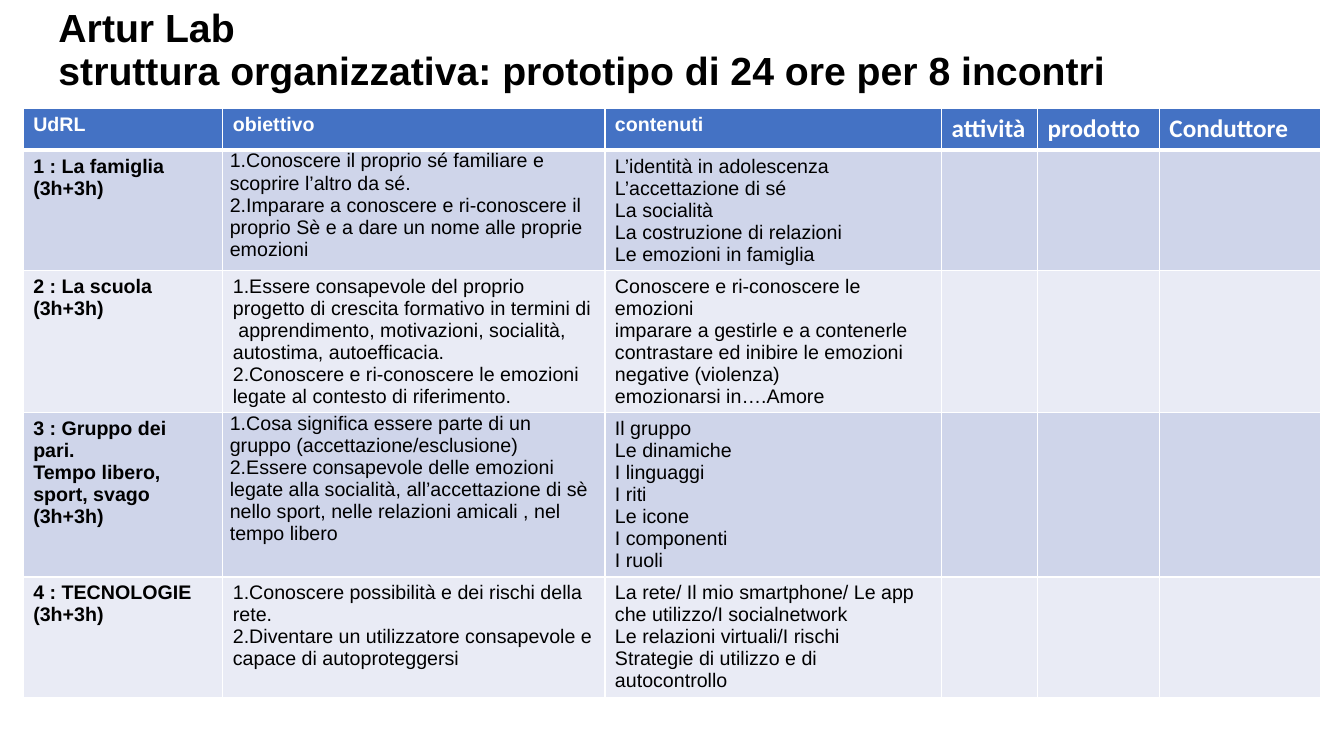
from lxml import etree
from pptx import Presentation
from pptx import util as u
from pptx.dml.color import RGBColor
from pptx.enum import text
from pptx.oxml import ns

BLACK = RGBColor(0x00, 0x00, 0x00)
WHITE = RGBColor(0xFF, 0xFF, 0xFF)
HEADER_BLUE = RGBColor(0x44, 0x72, 0xC4)
BANDS = [RGBColor(0xCF, 0xD5, 0xEA), RGBColor(0xE9, 0xEB, 0xF5)]

COLUMN_WIDTHS = [1.98, 3.79, 3.34, 0.95, 1.21, 1.6]
ROW_HEIGHTS = [0.41, 1.18, 1.41, 1.63, 1.19]

# Header cells: label, font, size
HEADERS = [
    ("UdRL", "Arial", 14),
    ("obiettivo", "Arial", 14),
    ("contenuti", "Arial", 14),
    ("attività", "Calibri", 18),
    ("prodotto", "Calibri", 18),
    ("Conduttore", "Calibri", 18),
]

# One entry per unit: name, goals, contents
UNITS = [
    (
        "1 : La famiglia\n(3h+3h)",
        "1.Conoscere il proprio sé familiare e scoprire l’altro da sé.\n"
        "2.Imparare a conoscere e ri-conoscere il proprio Sè e a dare un nome "
        "alle proprie emozioni",
        "L’identità in adolescenza\nL’accettazione di sé\nLa socialità\n"
        "La costruzione di relazioni\nLe emozioni in famiglia",
    ),
    (
        "2 : La scuola\n(3h+3h)",
        "1.Essere consapevole del proprio progetto di crescita formativo in "
        "termini di  apprendimento, motivazioni, socialità, autostima, "
        "autoefficacia.\n"
        "2.Conoscere e ri-conoscere le emozioni legate al contesto di "
        "riferimento.",
        "Conoscere e ri-conoscere le emozioni\n"
        "imparare a gestirle e a contenerle\n"
        "contrastare ed inibire le emozioni negative (violenza)\n"
        "emozionarsi in….Amore",
    ),
    (
        "3 : Gruppo dei pari.\nTempo libero, sport, svago\n(3h+3h)",
        "1.Cosa significa essere parte di un gruppo "
        "(accettazione/esclusione)\n"
        "2.Essere consapevole delle emozioni legate alla socialità, "
        "all’accettazione di sè nello sport, nelle relazioni amicali , nel "
        "tempo libero",
        "Il gruppo\nLe dinamiche\nI linguaggi\nI riti\nLe icone\n"
        "I componenti\nI ruoli",
    ),
    (
        "4 : TECNOLOGIE\n(3h+3h)",
        "1.Conoscere possibilità e dei rischi della rete.\n"
        "2.Diventare un utilizzatore consapevole e capace di autoproteggersi",
        "La rete/ Il mio smartphone/ Le app che utilizzo/I socialnetwork\n"
        "Le relazioni virtuali/I rischi\n"
        "Strategie di utilizzo e di autocontrollo",
    ),
]
TIGHT_GOALS = (1, 3)  # rows whose goals cell has narrower margins


def format_text(tf, font, size, color, bold):
    for p in tf.paragraphs:
        for r in p.runs:
            r.font.name = font
            r.font.size = u.Pt(size)
            r.font.color.rgb = color
            r.font.bold = bold


def add_title(slide):
    sp = slide.shapes.title
    sp.left, sp.top = u.Inches(0.48), u.Inches(0.03)
    sp.width, sp.height = u.Inches(12.42), u.Inches(0.96)
    tf = sp.text_frame
    tf.text = "Artur Lab\vstruttura organizzativa: prototipo di 24 ore per 8 incontri"
    tf.auto_size = text.MSO_AUTO_SIZE.NONE
    tf.vertical_anchor = text.MSO_ANCHOR.MIDDLE
    p = tf.paragraphs[0]
    p.alignment = text.PP_ALIGN.LEFT
    p.line_spacing = 0.9
    format_text(tf, "Arial", 28, BLACK, True)


def set_borders(cell, bottom):
    """Draw white lines on all sides; they must precede the cell's fill."""
    tc_pr = cell._tc.get_or_add_tcPr()
    widths = {"lnL": 1, "lnR": 1, "lnT": 1, "lnB": bottom}
    for i, (side, width) in enumerate(widths.items()):
        ln = etree.Element(ns.qn("a:" + side), w=str(u.Pt(width)))
        fill = etree.SubElement(ln, ns.qn("a:solidFill"))
        etree.SubElement(fill, ns.qn("a:srgbClr"), val=str(WHITE))
        tc_pr.insert(i, ln)


def fill_cell(cell, fill, words, font, size, color, bold):
    cell.fill.solid()
    cell.fill.fore_color.rgb = fill
    if words:
        cell.text_frame.text = words
        format_text(cell.text_frame, font, size, color, bold)


def add_units_table(slide):
    frame = slide.shapes.add_table(
        len(ROW_HEIGHTS), len(COLUMN_WIDTHS), u.Inches(0.23), u.Inches(1.08),
        u.Inches(sum(COLUMN_WIDTHS)), u.Inches(sum(ROW_HEIGHTS)))
    table = frame.table
    for column, width in zip(table.columns, COLUMN_WIDTHS):
        column.width = u.Inches(width)
    for row, height in zip(table.rows, ROW_HEIGHTS):
        row.height = u.Inches(height)

    # Header row
    for col, (label, font, size) in enumerate(HEADERS):
        cell = table.cell(0, col)
        fill_cell(cell, HEADER_BLUE, label, font, size, WHITE, True)
        set_borders(cell, 3)

    # Unit rows, with the last three columns left empty
    for row, unit in enumerate(UNITS, start=1):
        for col in range(len(COLUMN_WIDTHS)):
            cell = table.cell(row, col)
            words = unit[col] if col < len(unit) else ""
            fill_cell(cell, BANDS[(row - 1) % 2], words, "Arial", 14, BLACK, col == 0)
            set_borders(cell, 1)
            if row == 1:
                cell._tc.tcPr.find(ns.qn("a:lnT")).set("w", str(u.Pt(3)))

    for row in TIGHT_GOALS:
        cell = table.cell(row, 1)
        cell.margin_left = cell.margin_right = u.Inches(0.07)
        cell.margin_top = cell.margin_bottom = u.Inches(0)


def main():
    prs = Presentation()
    prs.slide_width, prs.slide_height = u.Inches(13.33), u.Inches(7.5)
    slide = prs.slides.add_slide(prs.slide_layouts[5])
    add_title(slide)
    add_units_table(slide)
    prs.save("out.pptx")


if __name__ == "__main__":
    main()
